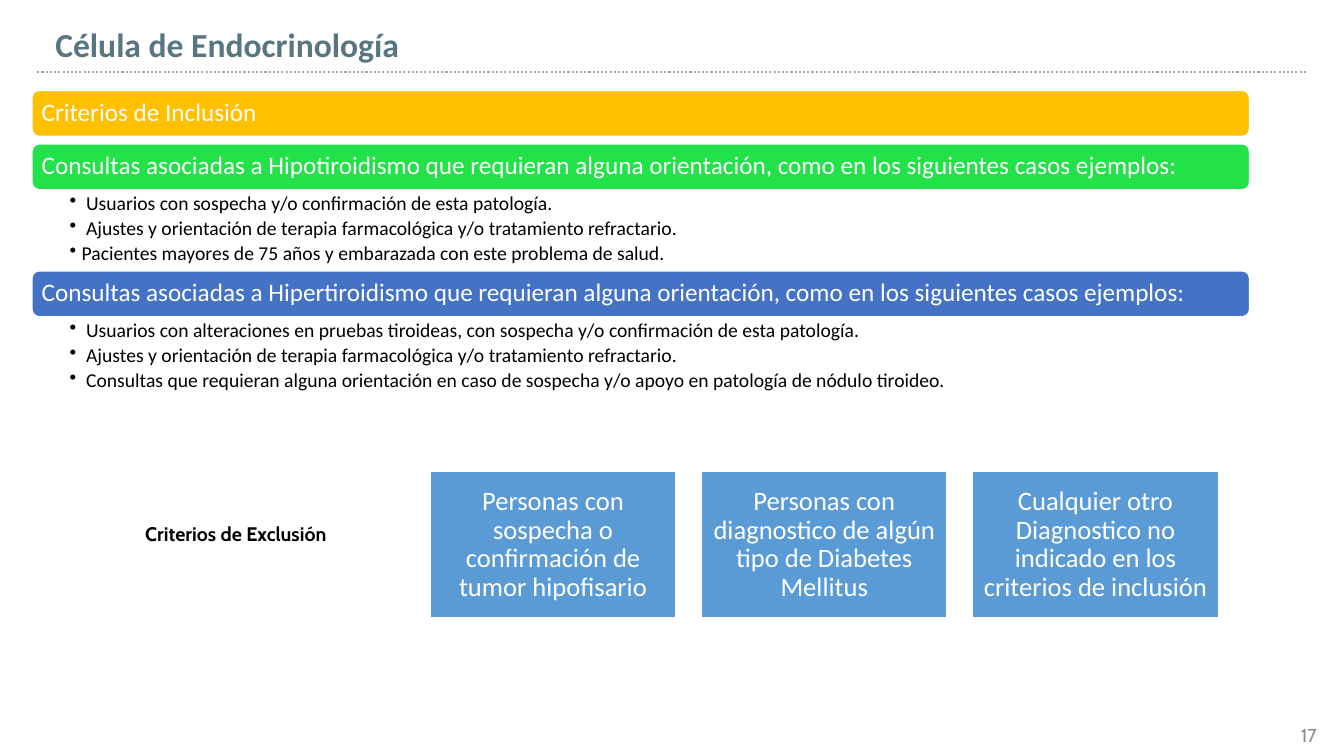
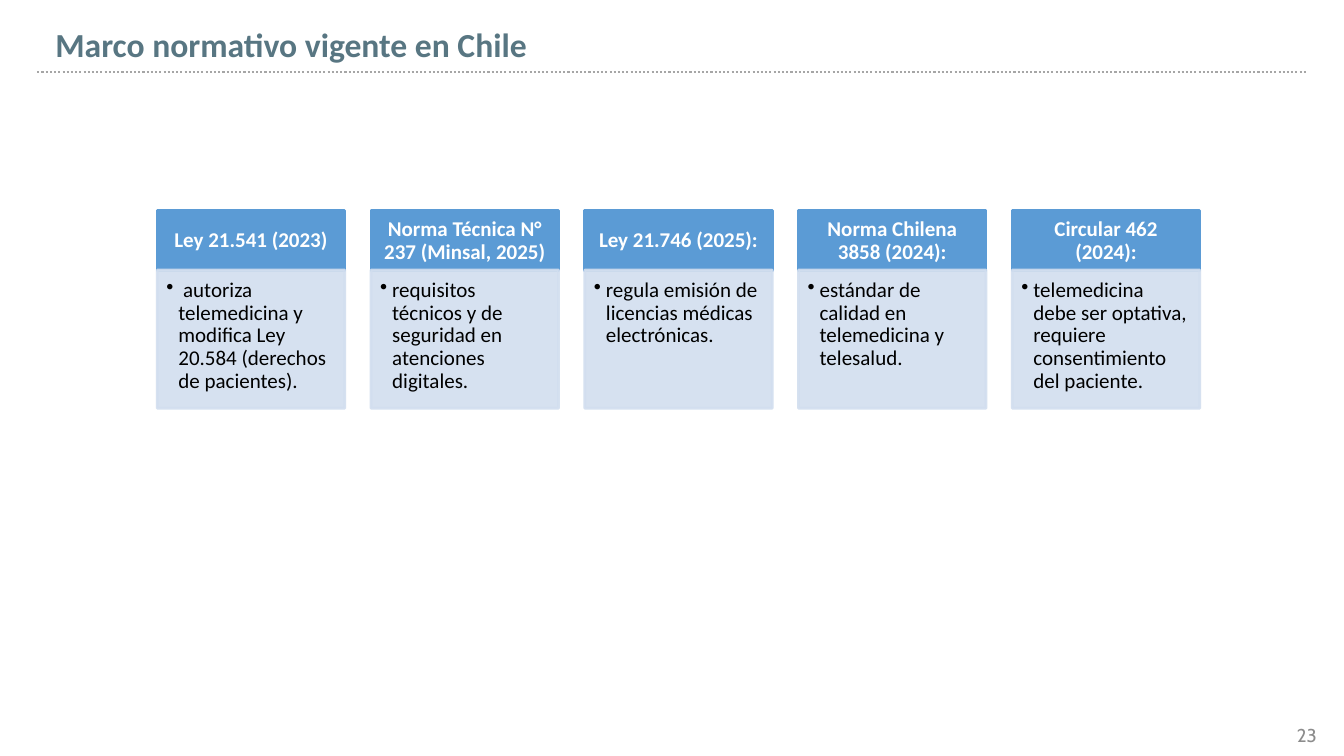
from lxml import etree
from pptx import Presentation
from pptx.dml.color import RGBColor
from pptx.enum.dml import MSO_LINE
from pptx.enum.shapes import MSO_CONNECTOR, MSO_SHAPE
from pptx.enum.text import MSO_ANCHOR, PP_ALIGN
from pptx.oxml.ns import qn
from pptx.util import Inches, Pt

TITLE = "587682"
RULE = "A6A6A6"
PAGE_NUMBER = "8C8C8C"
WHITE = "FFFFFF"
BLACK = "000000"
YELLOW = "FFC000"
GREEN = "23E148"
INDIGO = "4472C4"
BLUE = "5B9BD5"
PALE_BLUE = "D2DEEF"


def set_color(color_format, value, opacity=100):
    """Apply a hex colour, with opacity in percent."""
    color_format.rgb = RGBColor.from_string(value)
    if opacity < 100:
        color = color_format._xFill.find(qn("a:srgbClr"))
        etree.SubElement(color, qn("a:alpha"), val=str(opacity * 1000))


def add_text(slide, text, left, top, width, height, *, preset=None, fill=None,
             outline=WHITE, opacity=100, size=14, font="Calibri", color=BLACK,
             bold=False, align=PP_ALIGN.LEFT, anchor=MSO_ANCHOR.MIDDLE,
             insets=(0.1, 0.05, 0.1, 0.05), line_spacing=0.9, space_after=0,
             bullet=False):
    """Add a text box, or a filled preset shape; each line is a paragraph."""
    place = [Inches(length) for length in (left, top, width, height)]
    if preset is None:
        shape = slide.shapes.add_textbox(*place)
    else:
        shape = slide.shapes.add_shape(preset, *place)
        shape.shadow.inherit = False
        for fill_format, value in ((shape.fill, fill), (shape.line.fill, outline)):
            fill_format.solid()
            set_color(fill_format.fore_color, value, opacity)
        shape.line.width = Pt(2)

    frame = shape.text_frame
    frame.word_wrap = True
    frame.vertical_anchor = anchor
    (frame.margin_left, frame.margin_top,
     frame.margin_right, frame.margin_bottom) = [Inches(inset) for inset in insets]

    for index, line in enumerate(text.split("\n")):
        paragraph = frame.add_paragraph() if index else frame.paragraphs[0]
        paragraph.alignment = align
        paragraph.line_spacing = line_spacing
        paragraph.space_after = Pt(space_after)
        if bullet:
            properties = paragraph._p.get_or_add_pPr()
            properties.set("marL", str(Inches(0.12)))
            properties.set("indent", str(Inches(-0.12)))
            etree.SubElement(properties, qn("a:buChar"), char="•")
        run = paragraph.add_run()
        run.text = line
        run.font.size = Pt(size)
        run.font.name = font
        run.font.bold = bold
        set_color(run.font.color, color)


presentation = Presentation()
presentation.slide_width = Inches(13.33)
presentation.slide_height = Inches(7.5)

# Title, dotted rule and page number on every slide
slides = []
for title, number in (("Célula de Endocrinología", "17"),
                      ("Marco normativo vigente en Chile", "23")):
    slide = presentation.slides.add_slide(presentation.slide_layouts[6])
    add_text(slide, number, 10.19, 7.09, 3, 0.4, size=13.3, font="Cabin",
             color=PAGE_NUMBER, align=PP_ALIGN.RIGHT, line_spacing=1,
             insets=(0.13, 0.07, 0.13, 0.07))
    rule = slide.shapes.add_connector(MSO_CONNECTOR.STRAIGHT, Inches(0.37),
                                      Inches(0.71), Inches(12.97), Inches(0.71))
    set_color(rule.line.color, RULE)
    rule.line.width = Pt(1.5)
    rule.line.dash_style = MSO_LINE.ROUND_DOT
    etree.SubElement(rule._element.spPr, qn("a:effectLst"))
    add_text(slide, title, 0.45, 0.08, 12.75, 0.76, size=24, color=TITLE, bold=True)
    slides.append(slide)
criteria_slide, norms_slide = slides

# Inclusion criteria: headings, each with an optional list below
inclusion = [
    ("Criterios de Inclusión", YELLOW, []),
    ("Consultas asociadas a Hipotiroidismo que requieran alguna orientación, "
     "como en los siguientes casos ejemplos:", GREEN, [
         " Usuarios con sospecha y/o confirmación de esta patología.",
         " Ajustes y orientación de terapia farmacológica y/o tratamiento refractario.",
         "Pacientes mayores de 75 años y embarazada con este problema de salud.",
     ]),
    ("Consultas asociadas a Hipertiroidismo que requieran alguna orientación, "
     "como en los siguientes casos ejemplos:", INDIGO, [
         " Usuarios con alteraciones en pruebas tiroideas, con sospecha y/o "
         "confirmación de esta patología.",
         " Ajustes y orientación de terapia farmacológica y/o tratamiento refractario.",
         " Consultas que requieran alguna orientación en caso de sospecha y/o "
         "apoyo en patología de nódulo tiroideo.",
     ]),
]
top, heading_height, list_height, gap = 0.89, 0.47, 0.79, 0.06
for heading, fill, cases in inclusion:
    add_text(criteria_slide, heading, 0.31, top, 12.09, heading_height,
             preset=MSO_SHAPE.ROUNDED_RECTANGLE, fill=fill, size=18, color=WHITE,
             insets=(0.08, 0.05, 0.05, 0.05))
    top += heading_height
    if cases:
        add_text(criteria_slide, "\n".join(cases), 0.31, top, 12.09, list_height,
                 anchor=MSO_ANCHOR.TOP, insets=(0.38, 0.03, 0.14, 0.03),
                 space_after=2.8, bullet=True)
    top += list_height if cases else gap

# Exclusion criteria: label and three boxes
add_text(criteria_slide, "Criterios de Exclusión", 1.24, 5.07, 2.41, 0.45,
         font="Cabin", bold=True, anchor=MSO_ANCHOR.TOP, line_spacing=1,
         insets=(0.2, 0.11, 0.2, 0.11))
exclusion = [
    "Personas con sospecha o confirmación de tumor hipofisario",
    "Personas con diagnostico de algún tipo de Diabetes Mellitus",
    "Cualquier otro Diagnostico no indicado en los criterios de inclusión",
]
for column, reason in enumerate(exclusion):
    add_text(criteria_slide, reason, 4.26 + 2.69 * column, 4.67, 2.45, 1.47,
             preset=MSO_SHAPE.RECTANGLE, fill=BLUE, size=19, color=WHITE,
             align=PP_ALIGN.CENTER, insets=(0.08, 0.08, 0.08, 0.08))

# Regulations: one column for each, heading over description
norms = [
    ("Ley 21.541 (2023)",
     " autoriza telemedicina y modifica Ley 20.584 (derechos de pacientes)."),
    ("Norma Técnica N° 237 (Minsal, 2025)",
     "requisitos técnicos y de seguridad en atenciones digitales."),
    ("Ley 21.746 (2025):", "regula emisión de licencias médicas electrónicas."),
    ("Norma Chilena 3858 (2024):", "estándar de calidad en telemedicina y telesalud."),
    ("Circular 462 (2024):",
     "telemedicina debe ser optativa, requiere consentimiento del paciente."),
]
for column, (norm, description) in enumerate(norms):
    left = 1.56 + 2.12 * column
    add_text(norms_slide, norm, left, 2.09, 1.86, 0.6,
             preset=MSO_SHAPE.RECTANGLE, fill=BLUE, outline=BLUE, size=15,
             color=WHITE, bold=True, align=PP_ALIGN.CENTER,
             insets=(0.12, 0.07, 0.12, 0.07))
    add_text(norms_slide, description, left, 2.68, 1.86, 1.37,
             preset=MSO_SHAPE.RECTANGLE, fill=PALE_BLUE, outline=PALE_BLUE,
             opacity=90, size=15, anchor=MSO_ANCHOR.TOP,
             insets=(0.09, 0.09, 0.12, 0.13), bullet=True)

presentation.save("out.pptx")
